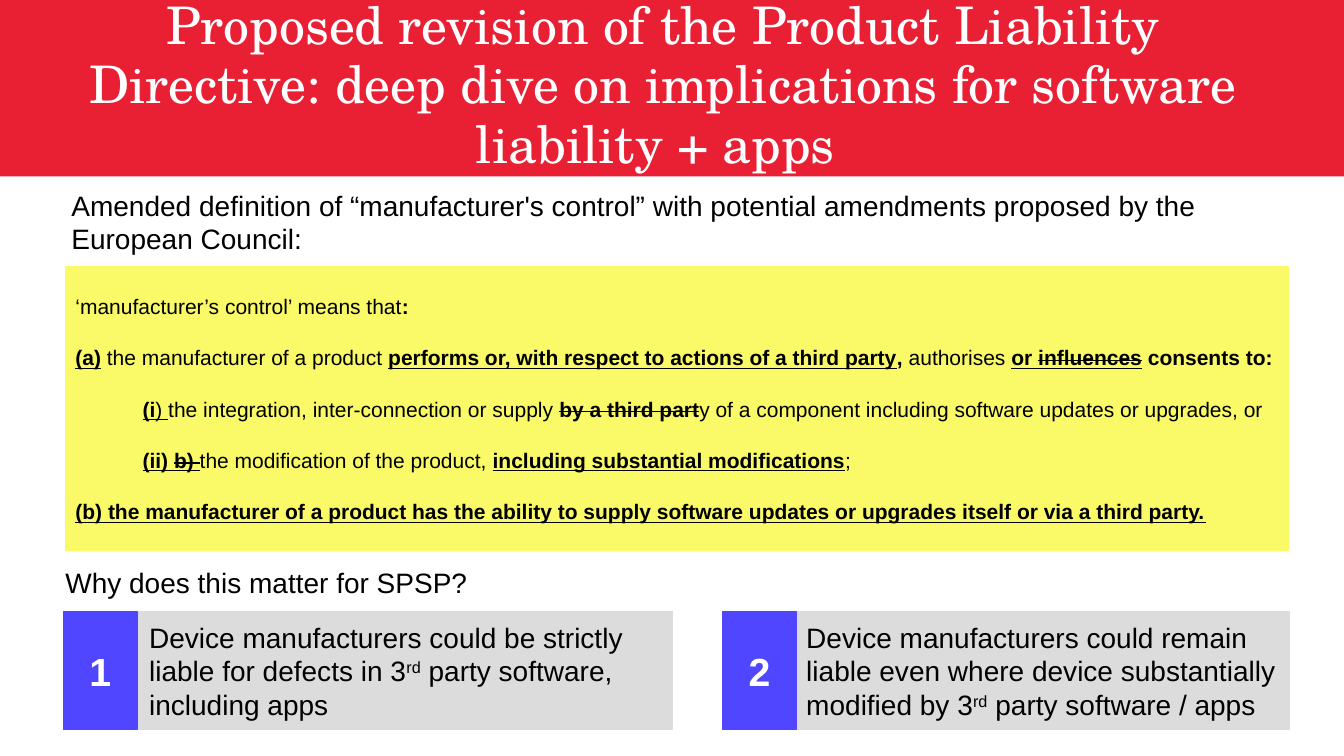
from pptx import Presentation
from pptx.dml.color import RGBColor
from pptx.enum.shapes import MSO_SHAPE
from pptx.enum.text import MSO_ANCHOR, PP_ALIGN
from pptx.util import Pt

theme = {
    "red": "E92033", "yellow": "FAFA69", "grey": "DCDCDC", "blue": "5046FF",
    "title": {"name": "TeX Gyre Schola", "size": 37, "color": "FFFFFF"},
    "body": {"name": "Arial", "size": 20, "color": "000000"},
    "law": {"name": "Arial", "size": 15, "color": "000000"},
    "badge": {"name": "Arial", "size": 28, "color": "FFFFFF", "bold": True},
}


def write(shape, look, paras, anchor=MSO_ANCHOR.TOP, **form):
    """Fill a shape; each run is (text, marks): b bold, u underline, s strike, ^ raised."""
    frame = shape.text_frame
    frame.word_wrap = True
    frame.vertical_anchor = anchor
    for num, runs in enumerate(paras):
        para = frame.paragraphs[0] if num == 0 else frame.add_paragraph()
        for key, value in {"alignment": PP_ALIGN.LEFT, **form}.items():
            setattr(para, key, value)
        for text, marks in runs:
            run = para.add_run()
            run.text = text
            font = run.font
            values = {"name": look["name"], "size": Pt(look["size"]),
                      "bold": look.get("bold", "b" in marks),
                      "underline": "u" in marks}
            for key, value in values.items():
                setattr(font, key, value)
            font.color.rgb = RGBColor.from_string(look["color"])
            props = run._r.get_or_add_rPr()
            if "s" in marks:
                props.set("strike", "sngStrike")
            if "^" in marks:
                props.set("baseline", "30000")


def block(home, box, color):
    """Add a plain filled rectangle to a slide or group."""
    shape = home.shapes.add_shape(MSO_SHAPE.RECTANGLE, *map(Pt, box))
    shape.shadow.inherit = False
    shape.fill.solid()
    shape.fill.fore_color.rgb = RGBColor.from_string(color)
    shape.line.color.rgb = RGBColor.from_string(color)
    shape.line.width = Pt(1)
    return shape


deck = Presentation()
deck.slide_width, deck.slide_height = Pt(960), Pt(540)
slide = deck.slides.add_slide(deck.slide_layouts[6])

band = block(slide, (0, 0, 960, 126), theme["red"])
band.line.fill.background()

title = slide.shapes.add_textbox(Pt(25.2), Pt(16.6), Pt(896.4), Pt(90))
write(title, theme["title"], [[(
    "Proposed revision of the Product Liability Directive: "
    "deep dive on implications for software liability + apps ", "")]],
    MSO_ANCHOR.MIDDLE, alignment=PP_ALIGN.CENTER, line_spacing=0.95)

heads = [
    ((43.9, 131, 873.4, 55.4),
     "Amended definition of “manufacturer's control” with potential "
     "amendments proposed by the European Council:"),
    ((39.6, 400.3, 866.2, 31.7), "Why does this matter for SPSP?"),
]
for box, text in heads:
    head = slide.shapes.add_textbox(*map(Pt, box))
    write(head, theme["body"], [[(text, "")]])

clauses = [
    [("‘manufacturer’s control’ means that", ""), (":", "b")],
    [("(a)", "bu"), (" ", "b"), ("the manufacturer of a product ", ""),
     ("performs or, with respect to actions of a third party", "bu"),
     (", ", "b"), ("authorises ", ""), ("or ", "bu"),
     ("influences", "bus"), (" consents to:", "b")],
    [("(i", "bu"), (") ", "u"),
     ("the integration, inter-connection or supply ", ""),
     ("by a third part", "bs"),
     ("y of a component including software updates or upgrades, or", "")],
    [("(ii) ", "bu"), ("b) ", "bus"),
     ("the modification of the product, ", ""),
     ("including substantial modifications", "bu"), (";", "")],
    [("(b) the manufacturer of a product has the ability to supply software "
      "updates or upgrades itself or via a third party.", "bu")],
]
law = block(slide, (46.8, 190.8, 873.4, 202.3), theme["yellow"])
write(law, theme["law"], clauses, MSO_ANCHOR.MIDDLE)
for num, para in enumerate(law.text_frame.paragraphs):
    if num:
        para.space_before = Pt(18.7)
    if num in (2, 3):
        para.level = 1
        props = para._p.get_or_add_pPr()
        props.set("marL", str(Pt(48)))
        props.set("indent", "0")

top, high, wide = 437, 84.2, 52.6
cards = [
    (45.4, 99.4, 380.9, "Device manufacturers could be strictly liable for "
     "defects in 3", " party software, including apps"),
    (516.2, 568.8, 352.1, "Device manufacturers could remain liable even where "
     "device substantially modified by 3", " party software / apps"),
]
for num, (left, start, span, lead, tail) in enumerate(cards, 1):
    group = slide.shapes.add_group_shape()
    card = block(group, (start, top, span, high), theme["grey"])
    write(card, theme["body"], [[(lead, ""), ("rd", "^"), (tail, "")]],
          MSO_ANCHOR.MIDDLE)
    badge = block(group, (left, top, wide, high), theme["blue"])
    write(badge, theme["badge"], [[(str(num), "")]],
          MSO_ANCHOR.MIDDLE, alignment=PP_ALIGN.CENTER)

deck.save("out.pptx")
